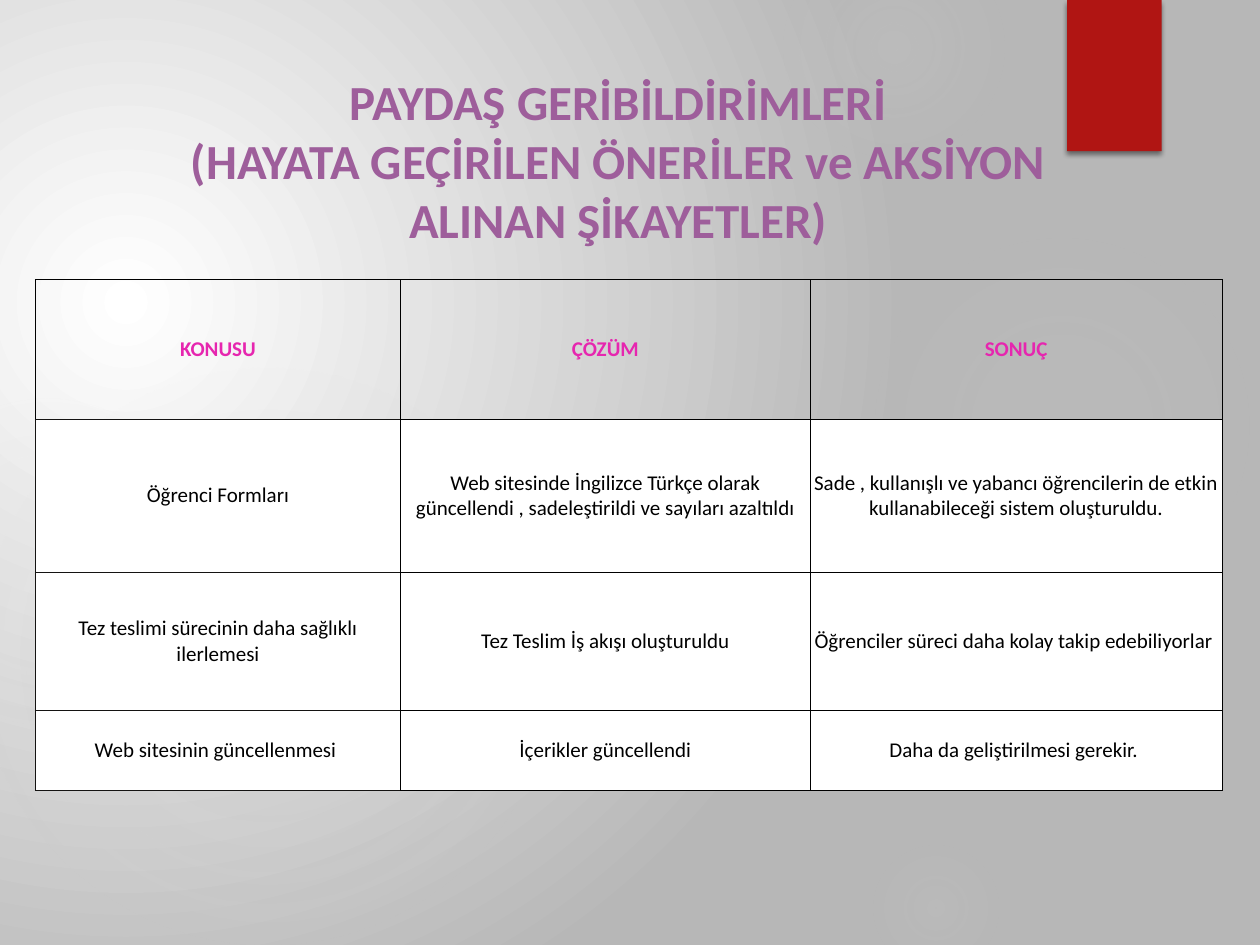
from dataclasses import dataclass

from lxml import etree
from pptx import Presentation, util as u
from pptx.dml.color import RGBColor
from pptx.enum import shapes, text
from pptx.oxml import ns, parse_xml

WIDTH, HEIGHT = u.Inches(10), u.Inches(7.5)
GRID_COLUMNS = 120
FONT = "Calibri"
PURPLE, PINK, RED = "9E5E9B", "E626AF", "B01513"
BLACK, INK, WHITE = "000000", "141312", "FFFFFF"
GLOW = "D9D9D9"


@dataclass
class Area:
    column: float
    row: float
    columns: float
    rows: float


@dataclass
class Stop:
    position: int
    color: str
    opacity: int = 100


@dataclass
class Glow:
    column: float
    row: float
    diameter: float
    center: int
    middle: int
    edge: int


GLOWS = [
    Glow(82.67, 22, 37, 7, 6, 69),
    Glow(74.67, -6, 21, 14, 7, 73),
    Glow(82.67, 80, 13, 9, 5, 66),
    Glow(-2, 35, 55, 11, 10, 75),
    Glow(-11, 38, 31, 8, 8, 72),
]
RIBBON = Area(101.64, 0, 9, 14.4)
HEADING = Area(10.8, 6.24, 96.12, 18.12)
HEADING_LINES = [
    "PAYDAŞ GERİBİLDİRİMLERİ",
    "(HAYATA GEÇİRİLEN ÖNERİLER ve AKSİYON ALINAN ŞİKAYETLER)",
]
FEEDBACK_LEFT, FEEDBACK_TOP = 3.36, 26.64
FEEDBACK_COLUMNS = [34.8, 39, 39.24]
FEEDBACK_ROWS = [13.32, 14.52, 13.2, 7.56]
FEEDBACK = [
    ["KONUSU", "ÇÖZÜM", "SONUÇ"],
    ["Öğrenci Formları",
     "Web sitesinde İngilizce Türkçe olarak güncellendi , sadeleştirildi ve sayıları azaltıldı",
     "Sade , kullanışlı ve yabancı öğrencilerin de etkin kullanabileceği sistem oluşturuldu."],
    ["Tez teslimi sürecinin daha sağlıklı ilerlemesi",
     "Tez Teslim İş akışı oluşturuldu",
     "Öğrenciler süreci daha kolay takip edebiliyorlar "],
    ["Web sitesinin güncellenmesi ",
     "İçerikler güncellendi",
     "Daha da geliştirilmesi gerekir. "],
]


def units(count: float) -> int:
    return round(WIDTH * count / GRID_COLUMNS)


def bounds(area: Area) -> tuple:
    return tuple(units(n) for n in (area.column, area.row, area.columns, area.rows))


def rgb(color: str) -> RGBColor:
    return RGBColor.from_string(color)


def set_circle_gradient(owner, stops: list[Stop], focus: tuple) -> None:
    marks = "".join(
        f'<a:gs pos="{s.position * 1000}"><a:srgbClr val="{s.color}">'
        f'<a:alpha val="{s.opacity * 1000}"/></a:srgbClr></a:gs>' for s in stops)
    sides = " ".join(f'{side}="{share * 1000}"' for side, share in zip("ltrb", focus))
    gradient = parse_xml(
        f'<a:gradFill {ns.nsdecls("a")} rotWithShape="1"><a:gsLst>{marks}</a:gsLst>'
        f'<a:path path="circle"><a:fillToRect {sides}/></a:path></a:gradFill>')
    solid = owner.find(ns.qn("a:solidFill"))
    owner.replace(solid, gradient)


def add_plain(slide, kind, area: Area, color: str):
    shape = slide.shapes.add_shape(kind, *bounds(area))
    shape.shadow.inherit = False
    shape.fill.solid()
    shape.fill.fore_color.rgb = rgb(color)
    shape.line.fill.background()
    return shape


def add_glow(slide, glow: Glow) -> None:
    area = Area(glow.column, glow.row, glow.diameter, glow.diameter)
    disc = add_plain(slide, shapes.MSO_SHAPE.OVAL, area, GLOW)
    stops = [Stop(0, GLOW, glow.center), Stop(36, GLOW, glow.middle), Stop(glow.edge, GLOW, 0)]
    set_circle_gradient(disc._element.spPr, stops, (50, 50, 50, 50))


def add_ribbon(slide) -> None:
    ribbon = add_plain(slide, shapes.MSO_SHAPE.RECTANGLE, RIBBON, RED)
    effects = ribbon._element.spPr.find(ns.qn("a:effectLst"))
    effects.append(parse_xml(
        f'<a:outerShdw {ns.nsdecls("a")} blurRad="{u.Pt(3)}" dist="{u.Pt(2)}" dir="5400000" '
        f'rotWithShape="0"><a:srgbClr val="{BLACK}"><a:alpha val="45000"/></a:srgbClr></a:outerShdw>'))


def write(paragraph, words: str, size: float, color: str, bold: bool) -> None:
    paragraph.alignment = text.PP_ALIGN.CENTER
    run = paragraph.add_run()
    run.text = words
    run.font.name = FONT
    run.font.size = u.Pt(size)
    run.font.bold = bold
    run.font.color.rgb = rgb(color)


def place_heading(slide) -> None:
    heading = slide.shapes.title
    heading.left, heading.top, heading.width, heading.height = bounds(HEADING)
    frame = heading.text_frame
    frame.word_wrap = True
    frame.auto_size = text.MSO_AUTO_SIZE.SHAPE_TO_FIT_TEXT
    frame.vertical_anchor = text.MSO_ANCHOR.TOP
    for index, line in enumerate(HEADING_LINES):
        paragraph = frame.add_paragraph() if index else frame.paragraphs[0]
        write(paragraph, line, 28, PURPLE, True)
    slide.shapes._spTree.append(heading._element)


def set_borders(cell, colors: dict[str, str]) -> None:
    properties = cell._tc.get_or_add_tcPr()
    for index, side in enumerate("LRTB"):
        border = etree.Element(ns.qn(f"a:ln{side}"), w=str(u.Pt(0.5)))
        fill = etree.SubElement(border, ns.qn("a:solidFill"))
        etree.SubElement(fill, ns.qn("a:srgbClr"), val=colors[side])
        properties.insert(index, border)


def fill_cell(cell, words: str, is_header: bool, is_first: bool) -> None:
    cell.margin_left = cell.margin_right = cell.margin_top = cell.margin_bottom = 0
    cell.vertical_anchor = text.MSO_ANCHOR.MIDDLE
    write(cell.text_frame.paragraphs[0], words, 12, PINK if is_header else BLACK, is_header)
    if is_header:
        cell.fill.background()
    else:
        cell.fill.solid()
        cell.fill.fore_color.rgb = rgb(WHITE)
    colors = dict.fromkeys("LRTB", BLACK)
    if is_first:
        colors["B"] = INK
        if not is_header:
            colors["L"] = colors["T"] = INK
    set_borders(cell, colors)


def add_feedback(slide) -> None:
    area = Area(FEEDBACK_LEFT, FEEDBACK_TOP, sum(FEEDBACK_COLUMNS), sum(FEEDBACK_ROWS))
    table = slide.shapes.add_table(len(FEEDBACK), len(FEEDBACK[0]), *bounds(area)).table
    table.first_row = table.horz_banding = False
    for column, width in zip(table.columns, FEEDBACK_COLUMNS):
        column.width = units(width)
    for row, height in zip(table.rows, FEEDBACK_ROWS):
        row.height = units(height)
    for r, entries in enumerate(FEEDBACK):
        for c, words in enumerate(entries):
            fill_cell(table.cell(r, c), words, r == 0, c == 0)


def main() -> None:
    deck = Presentation()
    deck.slide_width, deck.slide_height = WIDTH, HEIGHT
    slide = deck.slides.add_slide(deck.slide_layouts[5])
    slide.background.fill.solid()
    backdrop = slide._element.cSld.bg.bgPr
    set_circle_gradient(backdrop, [Stop(0, WHITE), Stop(100, "B7B7B7")], (45, 65, 125, 100))
    for glow in GLOWS:
        add_glow(slide, glow)
    add_ribbon(slide)
    place_heading(slide)
    add_feedback(slide)
    deck.save("out.pptx")


if __name__ == "__main__":
    main()
